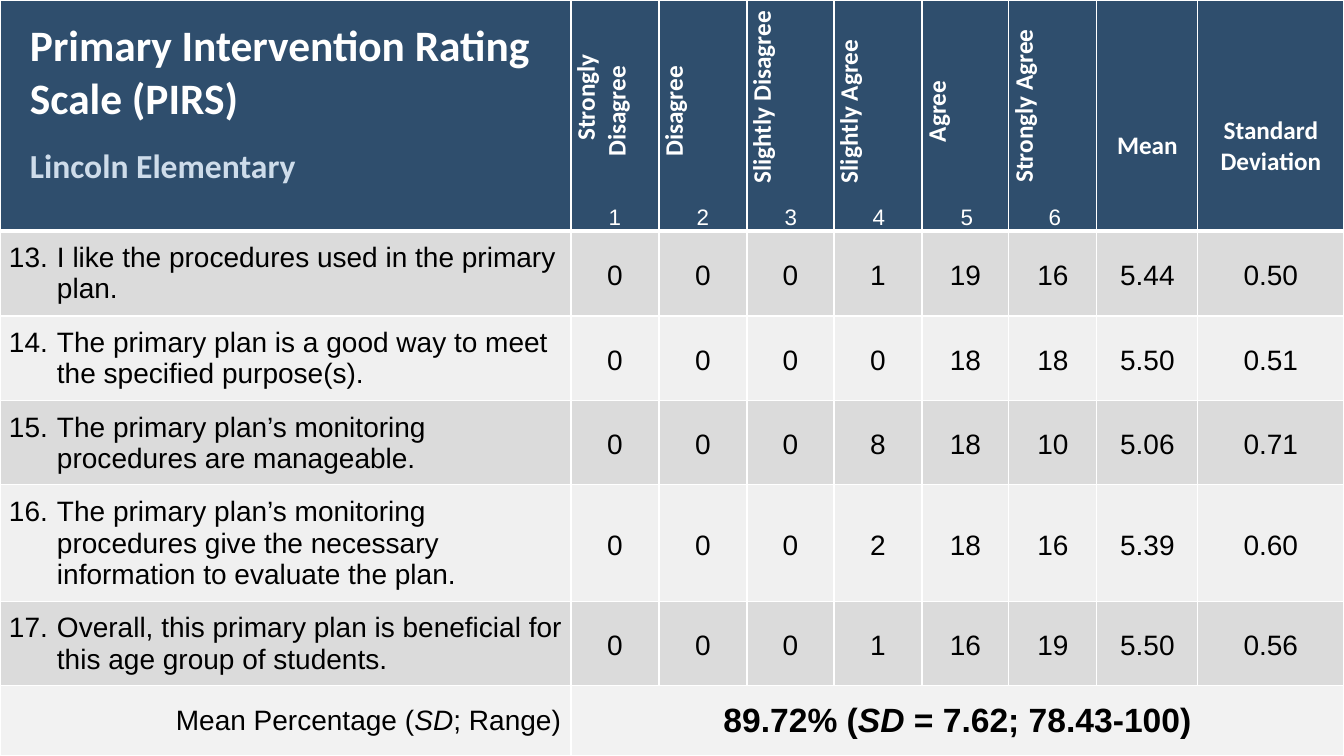
"""Build the Primary Intervention Rating Scale results slide."""
from lxml.etree import SubElement
from pptx import Presentation
from pptx.dml.color import RGBColor
from pptx.enum.text import MSO_ANCHOR, PP_ALIGN
from pptx.oxml import parse_xml
from pptx.oxml.ns import nsdecls, qn
from pptx.util import Pt

NAVY, WHITE, BLACK, PALE = "2F4E6D", "FFFFFF", "000000", "CEDCEA"
BANDS, TOTAL_FILL = ("DBDBDB", "F0F0F0"), "F2F2F2"
COLS = (571, 88, 88, 87, 88, 87, 88, 101, 146)
ROWS = (231, 85, 85, 84, 117, 84, 70)
TITLE, SCHOOL = "Primary Intervention Rating Scale (PIRS)", "Lincoln Elementary"
RATINGS = (
    ("Strongly Disagree", 28),
    ("Disagree", 0),
    ("Slightly Disagree", 28),
    ("Slightly Agree", 0),
    ("Agree", 0),
    ("Strongly Agree", 11),
)
STATS = ("Mean", "Standard Deviation")
ITEMS = (
    ("I like the procedures used in the primary plan.",
     "0", "0", "0", "1", "19", "16", "5.44", "0.50"),
    ("The primary plan is a good way to meet the specified purpose(s).",
     "0", "0", "0", "0", "18", "18", "5.50", "0.51"),
    ("The primary plan’s monitoring procedures are manageable.",
     "0", "0", "0", "8", "18", "10", "5.06", "0.71"),
    ("The primary plan’s monitoring procedures give the necessary "
     "information to evaluate the plan.",
     "0", "0", "0", "2", "18", "16", "5.39", "0.60"),
    ("Overall, this primary plan is beneficial for this age group of students.",
     "0", "0", "0", "1", "16", "19", "5.50", "0.56"),
)
FIRST_ITEM = 13
TOTAL_LABEL = ("Mean Percentage (", "SD", "; Range)")
TOTAL_VALUE = ("89.72% (", "SD", " = 7.62; 78.43-100)")


def px(n):
    return round(n * 914400 / 100.8)


def rgb(color):
    return RGBColor.from_string(color)


def add_run(p, text, size, color=BLACK, font="Arial", bold=False, italic=False):
    r = p.add_run()
    r.text = text
    f = r.font
    f.size, f.name, f.bold, f.italic = Pt(size), font, bold, italic
    f.color.rgb = rgb(color)


def indent(p, left, first):
    pPr = p._p.get_or_add_pPr()
    pPr.set("marL", str(px(left)))
    pPr.set("indent", str(px(first)))


def style_cell(cell, fill, top=1, bottom=1, margins=(7, 0, 7, 0)):
    cell.fill.solid()
    cell.fill.fore_color.rgb = rgb(fill)
    cell.vertical_anchor = MSO_ANCHOR.MIDDLE
    (cell.margin_left, cell.margin_top,
     cell.margin_right, cell.margin_bottom) = map(px, margins)
    sides = (("L", 1), ("R", 1), ("T", top), ("B", bottom))
    for i, (side, width) in enumerate(sides):
        cell._tc.get_or_add_tcPr().insert(i, parse_xml(
            f'<a:ln{side} {nsdecls("a")} w="{Pt(width)}"><a:solidFill>'
            f'<a:srgbClr val="{WHITE}"/></a:solidFill></a:ln{side}>'))
    return cell.text_frame.paragraphs[0]


def add_header(table):
    cell = table.cell(0, 0)
    p = style_cell(cell, NAVY, bottom=3, margins=(30, 20, 10, 5))
    cell.vertical_anchor = MSO_ANCHOR.TOP
    add_run(p, TITLE, 31, WHITE, "Calibri", True)
    p = cell.text_frame.add_paragraph()
    p.space_before = Pt(14.6)
    add_run(p, SCHOOL, 24, PALE, "Calibri", True)
    for col, (label, first) in enumerate(RATINGS, 1):
        cell = table.cell(0, col)
        p = style_cell(cell, NAVY, bottom=3)
        cell._tc.get_or_add_tcPr().set("vert", "vert270")
        p.alignment = PP_ALIGN.CENTER
        indent(p, 8, first)
        add_run(p, label, 18, WHITE, "Calibri", True)
    for col, label in enumerate(STATS, len(RATINGS) + 1):
        p = style_cell(table.cell(0, col), NAVY, bottom=3, margins=(7, 61, 7, 0))
        p.alignment = PP_ALIGN.CENTER
        add_run(p, label, 18, WHITE, "Calibri", True)


def add_items(table):
    for row, (statement, *values) in enumerate(ITEMS, 1):
        fill, top = BANDS[(row - 1) % 2], 3 if row == 1 else 1
        p = style_cell(table.cell(row, 0), fill, top)
        indent(p, 50, -48)
        add_run(p, f"{FIRST_ITEM + row - 1}.\t{statement}", 20)
        for col, value in enumerate(values, 1):
            p = style_cell(table.cell(row, col), fill, top)
            p.alignment, p.line_spacing = PP_ALIGN.CENTER, 1.15
            add_run(p, value, 20)


def add_total(table):
    row, last = len(ROWS) - 1, len(COLS) - 1
    table.cell(row, 1).merge(table.cell(row, last))
    parts = ((0, TOTAL_LABEL, 20, False, PP_ALIGN.RIGHT),
             (1, TOTAL_VALUE, 24, True, PP_ALIGN.CENTER))
    for col, texts, size, bold, align in parts:
        p = style_cell(table.cell(row, col), TOTAL_FILL, margins=(10, 5, 10, 5))
        p.alignment = align
        for text in texts:
            add_run(p, text, size, bold=bold, italic=text == "SD")


def add_scale(s):
    tf = s.shapes.add_textbox(px(580), px(198), px(521), px(37)).text_frame
    tf.word_wrap = True
    p = tf.paragraphs[0]
    tabs = SubElement(p._p.get_or_add_pPr(), qn("a:tabLst"))
    for i in range(len(RATINGS)):
        SubElement(tabs, qn("a:tab"), pos=str(px(25 + 88 * i)), algn="ctr")
    numbers = "".join(f"\t{i}" for i in range(1, len(RATINGS) + 1))
    add_run(p, numbers, 16, WHITE)


def main():
    prs = Presentation()
    prs.slide_width, prs.slide_height = px(sum(COLS)), px(sum(ROWS))
    s = prs.slides.add_slide(prs.slide_layouts[6])
    table = s.shapes.add_table(len(ROWS), len(COLS), 0, 0,
                               prs.slide_width, prs.slide_height).table
    table.horz_banding = False
    for col, width in zip(table.columns, COLS):
        col.width = px(width)
    for row, height in zip(table.rows, ROWS):
        row.height = px(height)
    add_header(table)
    add_items(table)
    add_total(table)
    add_scale(s)
    prs.save("out.pptx")


if __name__ == "__main__":
    main()
